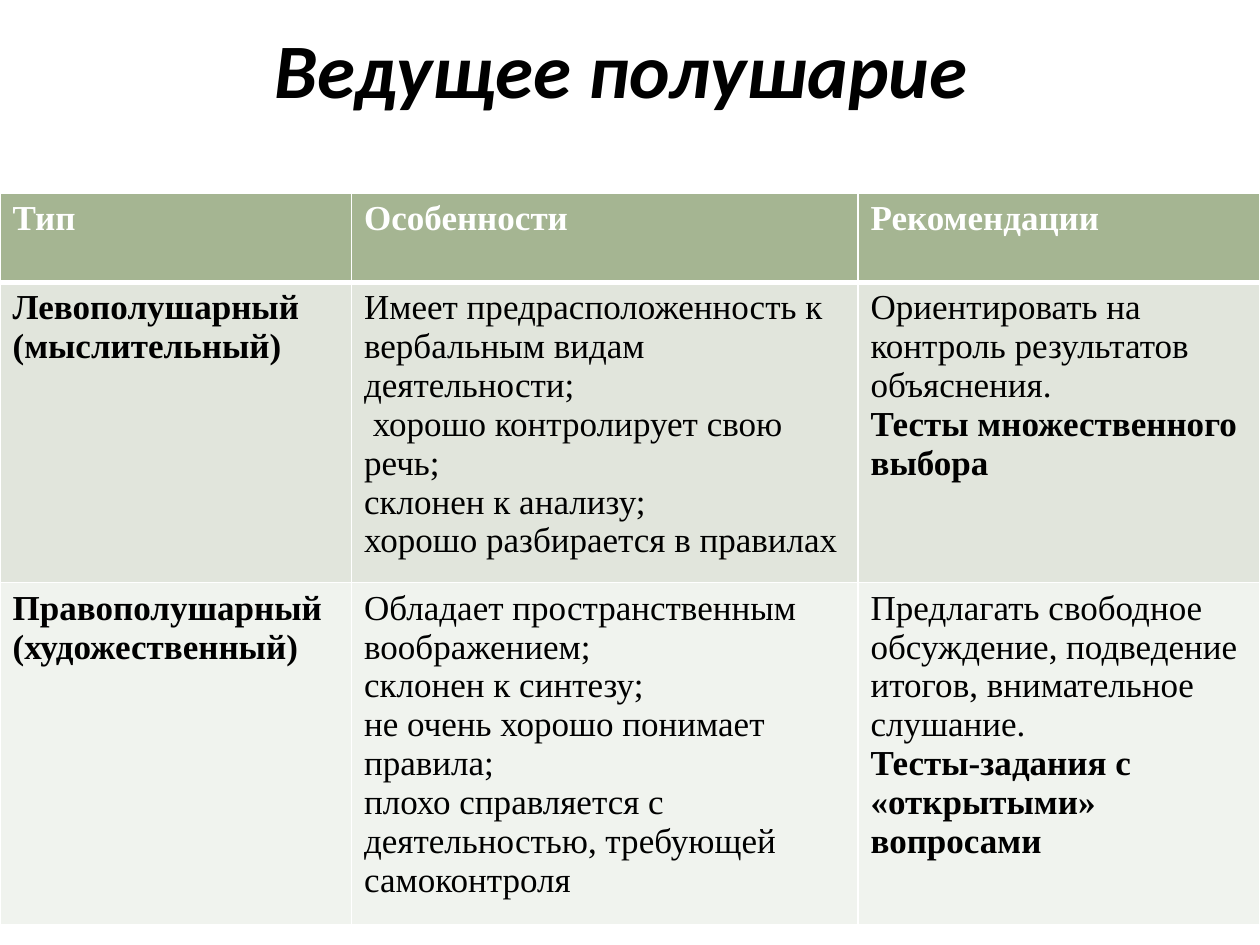
from dataclasses import dataclass

from lxml.etree import SubElement
from pptx import Presentation
from pptx.dml.color import RGBColor
from pptx.enum.text import MSO_ANCHOR, PP_ALIGN
from pptx.oxml.ns import qn
from pptx.util import Inches, Pt

# Content: each cell is a list of (text, bold) paragraphs
TITLE = "Ведущее полушарие "
ROWS = [
    [[("Тип", True)], [("Особенности", True)], [("Рекомендации", True)]],
    [
        [("Левополушарный (мыслительный)", True)],
        [("Имеет предрасположенность к вербальным видам деятельности;", False),
         (" хорошо контролирует свою речь;", False),
         ("склонен к анализу;", False),
         ("хорошо разбирается в правилах", False)],
        [("Ориентировать на контроль результатов объяснения.", False),
         ("Тесты множественного выбора", True)],
    ],
    [
        [("Правополушарный (художественный)", True)],
        [("Обладает пространственным воображением;", False),
         ("склонен к синтезу;", False),
         ("не очень хорошо понимает правила;", False),
         ("плохо справляется с деятельностью, требующей самоконтроля", False)],
        [("Предлагать свободное обсуждение, подведение итогов, внимательное слушание.", False),
         ("Тесты-задания с «открытыми» вопросами", True)],
    ],
]


@dataclass(frozen=True)
class Theme:
    title_font: str = "Calibri"
    table_font: str = "Times New Roman"
    title_size: int = 44
    table_size: int = 20
    text: str = "000000"
    header_text: str = "FFFFFF"
    border: str = "FFFFFF"
    row_fills: tuple = ("A5B592", "E1E5DC", "F0F3EE")


THEME = Theme()

# Layout in inches
WIDTH, HEIGHT = 10, 7.5
MARGIN = WIDTH * 0.05
TITLE_HEIGHT = 1.07
TABLE_TOP = 1.53
COLUMN_WIDTHS = (2.79, 4.02, 3.19)
ROW_HEIGHTS = (0.71, 2.26, 2.56)


def format_paragraph(paragraph, font, size, color, bold, italic=False):
    for run in paragraph.runs:
        run.font.name = font
        run.font.size = Pt(size)
        run.font.bold = bold
        run.font.italic = italic
        run.font.color.rgb = RGBColor.from_string(color)


def add_borders(cell, bottom_width):
    properties = cell._tc.get_or_add_tcPr()
    for side, width in (("L", 1), ("R", 1), ("T", 1), ("B", bottom_width)):
        line = SubElement(properties, qn(f"a:ln{side}"), w=str(Pt(width)))
        fill = SubElement(line, qn("a:solidFill"))
        SubElement(fill, qn("a:srgbClr"), val=THEME.border)


def fill_cell(cell, paragraphs, row_index):
    is_header = row_index == 0
    add_borders(cell, 3 if is_header else 1)
    cell.fill.solid()
    cell.fill.fore_color.rgb = RGBColor.from_string(THEME.row_fills[row_index])
    # No bottom margin, so the text always fits the given row height
    cell.margin_bottom = 0
    cell.text_frame.text = "\n".join(text for text, _ in paragraphs)
    color = THEME.header_text if is_header else THEME.text
    for paragraph, (_, bold) in zip(cell.text_frame.paragraphs, paragraphs):
        format_paragraph(paragraph, THEME.table_font, THEME.table_size, color, bold)


def add_title(slide):
    shape = slide.shapes.add_textbox(
        Inches(MARGIN), 0, Inches(WIDTH - 2 * MARGIN), Inches(TITLE_HEIGHT))
    text_frame = shape.text_frame
    text_frame.word_wrap = True
    text_frame.vertical_anchor = MSO_ANCHOR.MIDDLE
    text_frame.text = TITLE
    paragraph = text_frame.paragraphs[0]
    paragraph.alignment = PP_ALIGN.CENTER
    format_paragraph(paragraph, THEME.title_font, THEME.title_size, THEME.text, True, True)


def add_hemisphere_table(slide):
    table = slide.shapes.add_table(
        len(ROWS), len(COLUMN_WIDTHS), 0, Inches(TABLE_TOP),
        Inches(WIDTH), Inches(sum(ROW_HEIGHTS))).table
    for column, width in zip(table.columns, COLUMN_WIDTHS):
        column.width = Inches(width)
    for row_index, (row, height) in enumerate(zip(table.rows, ROW_HEIGHTS)):
        row.height = Inches(height)
        for cell, paragraphs in zip(row.cells, ROWS[row_index]):
            fill_cell(cell, paragraphs, row_index)


def main():
    presentation = Presentation()
    presentation.slide_width = Inches(WIDTH)
    presentation.slide_height = Inches(HEIGHT)
    slide = presentation.slides.add_slide(presentation.slide_layouts[6])
    add_title(slide)
    add_hemisphere_table(slide)
    presentation.save("out.pptx")


if __name__ == "__main__":
    main()
